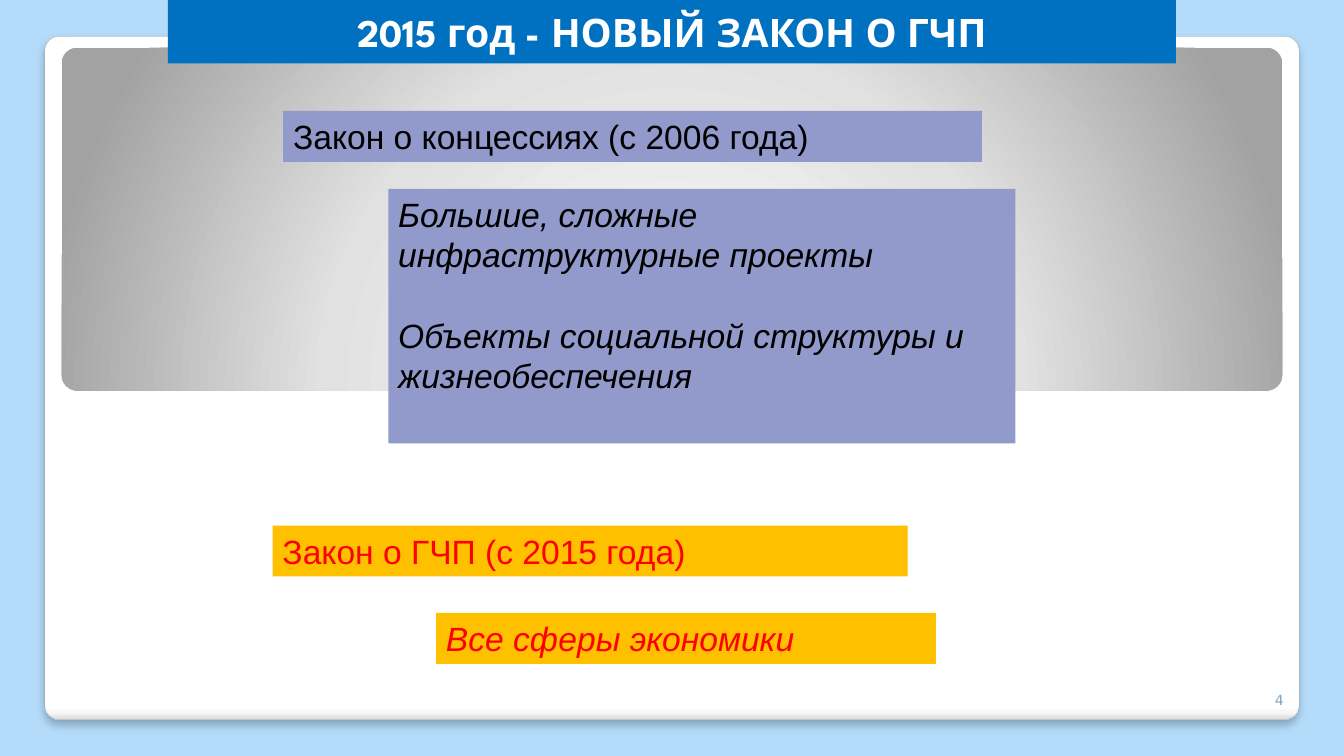
from lxml.etree import SubElement
from pptx import Presentation
from pptx.dml.color import RGBColor
from pptx.enum.shapes import MSO_SHAPE as Shape
from pptx.enum.text import MSO_ANCHOR as Anchor, PP_ALIGN as Align
from pptx.oxml import parse_xml
from pptx.oxml.ns import nsdecls, qn
from pptx.util import Pt

TITLE = "2015 год - НОВЫЙ ЗАКОН О ГЧП"
PAGE_NUMBER = "4"
BOXES = [
    ("concession", (202.3, 79.3, 499, 36.4), ["Закон о концессиях (с 2006 года)"], False),
    ("concession", (277.4, 135, 448, 181.7),
     ["Большие, сложные инфраструктурные проекты",
      "Объекты социальной структуры и жизнеобеспечения"], True),
    ("partnership", (194.7, 375.4, 453.6, 36.4), ["Закон о ГЧП (с 2015 года)"], False),
    ("partnership", (311.5, 437.8, 357.1, 36.4), ["Все сферы экономики"], True),
]
THEME = {
    "background": "B4DCFA",
    "edge": "A4A4A4",
    "title": ("0070C0", "FFFFFF"),
    "concession": ("919ACA", "000000"),
    "partnership": ("FFC000", "FF0000"),
    "number": "85A3B9",
    "card": [(0, "FFFFFF"), (98, "FFFFFF"), (99, "F7F7F7"), (100, "DADADA")],
    "panel": [(0, "FFFFFF"), (55, "E1E1E1"), (100, "A2A2A2")],
    "sizes": {"title": 28, "body": 24, "number": 10},
    "fonts": {"title": "League Spartan", "body": "Arial", "number": "DejaVu Sans"},
}
LINEAR = '<a:lin ang="5400000" scaled="0"/>'
RADIAL = ('<a:path path="circle"><a:fillToRect l="50000" t="175000" '
          'r="50000" b="-75000"/></a:path>')


def color(value):
    return RGBColor.from_string(value)


def add_block(slide, box, fill=None, kind=Shape.RECTANGLE):
    shape = slide.shapes.add_shape(kind, *map(Pt, box))
    shape.shadow.inherit = False
    shape.line.fill.background()
    if fill:
        shape.fill.solid()
        shape.fill.fore_color.rgb = color(fill)
    else:
        shape.fill.background()
    return shape


def add_rounded(slide, box, radius, stops, direction):
    shape = add_block(slide, box, kind=Shape.ROUNDED_RECTANGLE)
    shape.adjustments[0] = radius
    stop_xml = "".join(
        f'<a:gs pos="{position * 1000}"><a:srgbClr val="{value}"/></a:gs>'
        for position, value in stops)
    gradient = parse_xml(
        f'<a:gradFill {nsdecls("a")} rotWithShape="1">'
        f'<a:gsLst>{stop_xml}</a:gsLst>{direction}</a:gradFill>')
    properties = shape.element.spPr
    properties.replace(properties.find(qn("a:noFill")), gradient)
    return shape


def add_shadow(shape):
    effects = shape.element.spPr.find(qn("a:effectLst"))
    shadow = SubElement(effects, qn("a:outerShdw"), blurRad=str(Pt(6)),
                        dist=str(Pt(4)), dir="5400000", algn="t", rotWithShape="0")
    tint = SubElement(shadow, qn("a:srgbClr"), val="000000")
    SubElement(tint, qn("a:alpha"), val="25000")


def write(shape, lines, role="body", ink="000000", align=Align.LEFT,
          anchor=Anchor.TOP, bold=False, italic=False, gap=0):
    frame = shape.text_frame
    frame.word_wrap = True
    frame.vertical_anchor = anchor
    for index, line in enumerate(lines):
        paragraph = frame.add_paragraph() if index else frame.paragraphs[0]
        paragraph.alignment = align
        paragraph.space_before = Pt(gap if index else 0)
        run = paragraph.add_run()
        run.text = line
        font = run.font
        font.name = THEME["fonts"][role]
        font.size = Pt(THEME["sizes"][role])
        font.bold, font.italic = bold, italic
        font.color.rgb = color(ink)


def main():
    presentation = Presentation()
    presentation.slide_width, presentation.slide_height = Pt(960), Pt(540)
    slide = presentation.slides.add_slide(presentation.slide_layouts[6])
    slide.background.fill.solid()
    slide.background.fill.fore_color.rgb = color(THEME["background"])

    card = add_rounded(slide, (32, 26, 896, 488), 0.021, THEME["card"], LINEAR)
    card.line.color.rgb = color(THEME["edge"])
    card.line.width = Pt(0.16)
    add_shadow(card)
    add_rounded(slide, (44, 34, 872, 245), 0.046, THEME["panel"], RADIAL)

    number = slide.shapes.add_textbox(*map(Pt, (876, 481, 48, 28.8)))
    write(number, [PAGE_NUMBER], role="number", ink=THEME["number"],
          align=Align.RIGHT, anchor=Anchor.BOTTOM)

    for group, box, lines, italic in BOXES:
        fill, ink = THEME[group]
        write(add_block(slide, box, fill), lines, ink=ink, italic=italic, gap=28.8)

    fill, ink = THEME["title"]
    write(add_block(slide, (120, 0, 720, 45.2), fill), [TITLE], role="title",
          ink=ink, align=Align.CENTER, anchor=Anchor.MIDDLE, bold=True)
    presentation.save("out.pptx")


if __name__ == "__main__":
    main()
